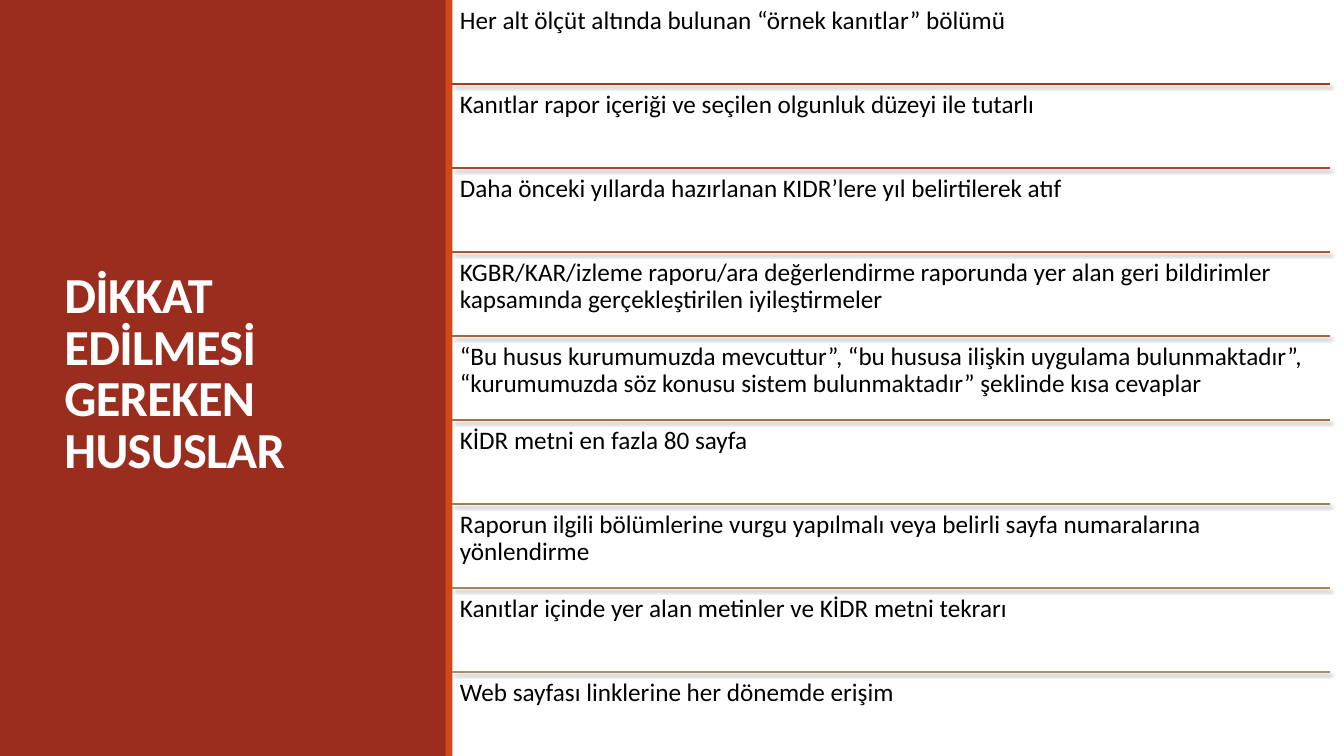
from dataclasses import dataclass

from lxml import etree
from pptx import Presentation
from pptx import util as u
from pptx.dml.color import RGBColor
from pptx.enum import shapes, text
from pptx.oxml import parse_xml
from pptx.oxml.ns import nsdecls, qn
from pptx.shapes.connector import Connector
from pptx.slide import Slide
from pptx.text.text import TextFrame


@dataclass(frozen=True)
class Theme:
    font: str = "Calibri"
    panel: str = "9B2D1F"
    stripe: str = "D34817"
    title: str = "FFFFFF"
    body: str = "000000"
    shadow: str = "000000"
    title_size: int = 36
    body_size: int = 18


@dataclass(frozen=True)
class Box:
    left: u.Length
    top: u.Length
    width: u.Length
    height: u.Length


@dataclass(frozen=True)
class Topic:
    wording: str
    rule_color: str | None = None


THEME = Theme()
SLIDE_WIDTH, SLIDE_HEIGHT = u.Cm(33.87), u.Cm(19.05)
PANEL = Box(u.Cm(0), u.Cm(0), u.Cm(11.25), SLIDE_HEIGHT)
STRIPE = Box(u.Cm(11.23), u.Cm(0), u.Cm(0.17), SLIDE_HEIGHT)
HEADING = Box(u.Cm(1.37), u.Cm(1.45), u.Cm(8.56), u.Cm(16.03))
TOPIC_LEFT, TOPIC_WIDTH = u.Cm(11.4), u.Cm(22.11)
TOPIC_INSET = u.Cm(0.19)

TOPICS = [
    Topic("Her alt ölçüt altında bulunan “örnek kanıtlar” bölümü", "9E3C26"),
    Topic("Kanıtlar rapor içeriği ve seçilen olgunluk düzeyi ile tutarlı", "A14A2E"),
    Topic("Daha önceki yıllarda hazırlanan KIDR’lere yıl belirtilerek atıf", "A35836"),
    Topic("KGBR/KAR/izleme raporu/ara değerlendirme raporunda yer alan geri bildirimler "
          "kapsamında gerçekleştirilen iyileştirmeler", "A4653F"),
    Topic("“Bu husus kurumumuzda mevcuttur”, “bu hususa ilişkin uygulama bulunmaktadır”, "
          "“kurumumuzda söz konusu sistem bulunmaktadır” şeklinde kısa cevaplar", "A57148"),
    Topic("KİDR metni en fazla 80 sayfa", "A67D52"),
    Topic("Raporun ilgili bölümlerine vurgu yapılmalı veya belirli sayfa numaralarına "
          "yönlendirme", "A5865D"),
    Topic("Kanıtlar içinde yer alan metinler ve KİDR metni tekrarı", "A28E6A"),
    Topic("Web sayfası linklerine her dönemde erişim"),
]


def write(frame: TextFrame, wording: str, *, size: int, color: str, bold: bool = False,
          line_spacing: float = 1.0, tracking: float = 0,
          anchor: text.MSO_ANCHOR = text.MSO_ANCHOR.TOP) -> None:
    frame.word_wrap = True
    frame.auto_size = text.MSO_AUTO_SIZE.NONE
    frame.vertical_anchor = anchor
    paragraph = frame.paragraphs[0]
    paragraph.alignment = text.PP_ALIGN.LEFT
    paragraph.line_spacing = line_spacing
    run = paragraph.add_run()
    run.text = wording
    run.font.name = THEME.font
    run.font.size = u.Pt(size)
    run.font.bold = bold
    run.font.color.rgb = RGBColor.from_string(color)
    if tracking:
        run.font._element.set("spc", str(int(tracking * 100)))


def add_band(slide: Slide, box: Box, color: str) -> None:
    band = slide.shapes.add_shape(shapes.MSO_SHAPE.RECTANGLE,
                                  box.left, box.top, box.width, box.height)
    band.shadow.inherit = False
    band.fill.solid()
    band.fill.fore_color.rgb = RGBColor.from_string(color)
    band.line.fill.background()


def add_heading(slide: Slide, box: Box, wording: str) -> None:
    heading = slide.shapes.title
    heading.left, heading.top = box.left, box.top
    heading.width, heading.height = box.width, box.height
    slide.shapes._spTree.append(heading._element)
    write(heading.text_frame, wording, size=THEME.title_size, color=THEME.title, bold=True,
          line_spacing=0.85, tracking=-0.5, anchor=text.MSO_ANCHOR.MIDDLE)


def cast_shadow(rule: Connector) -> None:
    properties = rule._element.find(qn("p:spPr"))
    effects = parse_xml(f"<a:effectLst {nsdecls('a')}/>")
    shadow = etree.SubElement(effects, qn("a:outerShdw"), blurRad=str(u.Pt(3)),
                              dist=str(u.Pt(2)), dir="2700000", algn="ctr", rotWithShape="0")
    tint = etree.SubElement(shadow, qn("a:srgbClr"), val=THEME.shadow)
    etree.SubElement(tint, qn("a:alpha"), val="60000")
    properties.append(effects)


def add_rule(slide: Slide, height: u.Length, color: str) -> None:
    rule = slide.shapes.add_connector(shapes.MSO_CONNECTOR.STRAIGHT, TOPIC_LEFT, height,
                                      TOPIC_LEFT + TOPIC_WIDTH, height)
    rule.line.width = u.Pt(1)
    rule.line.color.rgb = RGBColor.from_string(color)
    cast_shadow(rule)


def add_topic(slide: Slide, topic: Topic, top: u.Length, height: u.Length) -> None:
    frame = slide.shapes.add_textbox(TOPIC_LEFT, top, TOPIC_WIDTH, height).text_frame
    frame.margin_left = frame.margin_right = TOPIC_INSET
    frame.margin_top = frame.margin_bottom = TOPIC_INSET
    write(frame, topic.wording, size=THEME.body_size, color=THEME.body, line_spacing=0.9)
    if topic.rule_color:
        add_rule(slide, u.Emu(top + height), topic.rule_color)


def main() -> None:
    deck = Presentation()
    deck.slide_width, deck.slide_height = SLIDE_WIDTH, SLIDE_HEIGHT
    slide = deck.slides.add_slide(deck.slide_layouts.get_by_name("Title Only"))
    add_band(slide, PANEL, THEME.panel)
    add_heading(slide, HEADING, "DİKKAT EDİLMESİ GEREKEN HUSUSLAR")
    add_band(slide, STRIPE, THEME.stripe)
    row_height = u.Emu(SLIDE_HEIGHT // len(TOPICS))
    for row, topic in enumerate(TOPICS):
        add_topic(slide, topic, u.Emu(row * row_height), row_height)
    deck.save("out.pptx")


if __name__ == "__main__":
    main()
